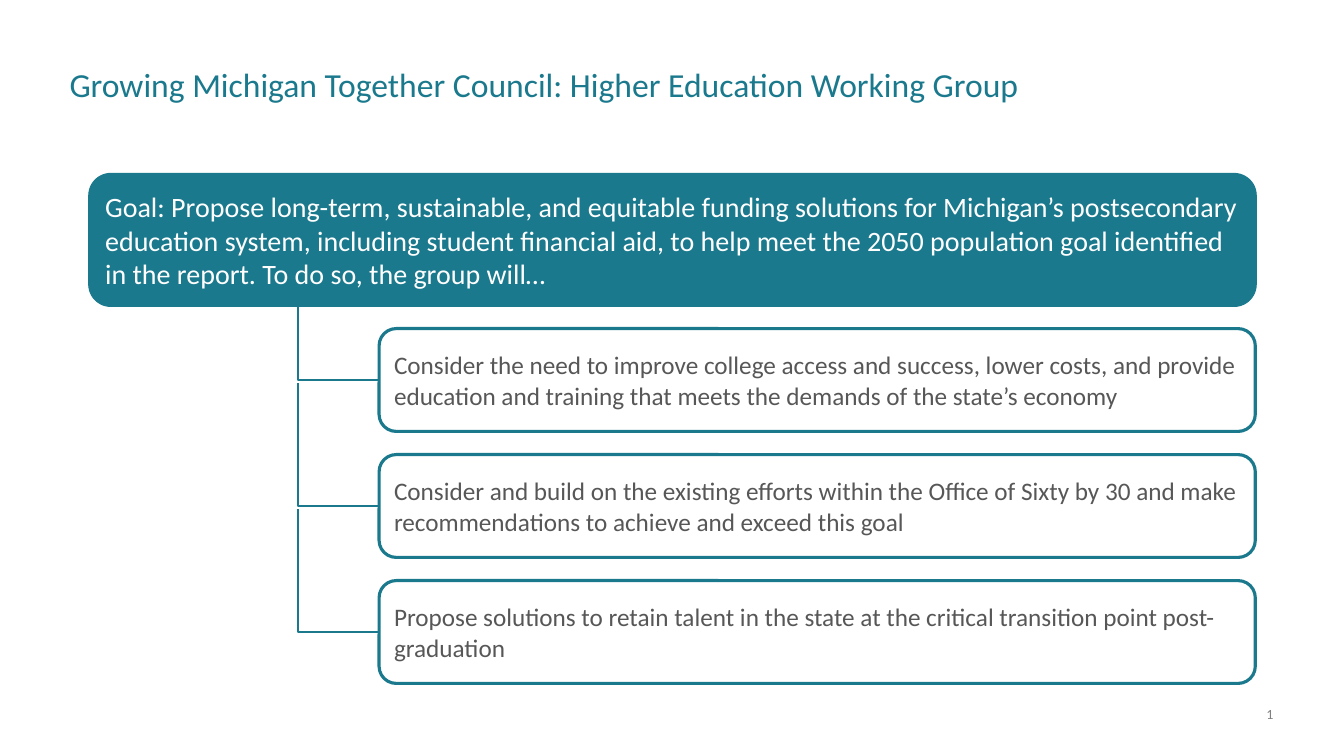
from dataclasses import dataclass

from lxml import etree
from pptx import Presentation
from pptx.dml.color import RGBColor
from pptx.enum.shapes import MSO_CONNECTOR, MSO_SHAPE
from pptx.enum.text import MSO_ANCHOR, PP_ALIGN
from pptx.oxml.ns import qn
from pptx.util import Inches, Pt

ROUND = MSO_SHAPE.ROUNDED_RECTANGLE
ELBOW = MSO_CONNECTOR.ELBOW
TOP, MIDDLE, BOTTOM = MSO_ANCHOR.TOP, MSO_ANCHOR.MIDDLE, MSO_ANCHOR.BOTTOM
LEFT, RIGHT = PP_ALIGN.LEFT, PP_ALIGN.RIGHT


@dataclass(frozen=True)
class Theme:
    font: str = "Calibri"
    teal: str = "1A798D"
    white: str = "FFFFFF"
    ink: str = "575757"
    gray: str = "808080"
    title: int = 24
    goal: int = 20
    task: int = 18
    number: int = 10


@dataclass(frozen=True)
class Box:
    left: float
    top: float
    width: float
    height: float
    text: str
    size: int
    color: str
    fill: str = ""
    line: float = 0


THEME = Theme()


def write(frame, box: Box, anchor=MIDDLE, align=LEFT) -> None:
    frame.word_wrap = True
    frame.vertical_anchor = anchor
    para = frame.paragraphs[0]
    para.text = box.text
    para.alignment = align
    font = para.font
    font.name = THEME.font
    font.size = Pt(box.size)
    font.color.rgb = RGBColor.from_string(box.color)


def place(box: Box) -> tuple:
    return tuple(Inches(n) for n in (box.left, box.top, box.width, box.height))


def add_label(slide, box: Box, anchor=TOP, align=LEFT):
    frame = slide.shapes.add_textbox(*place(box)).text_frame
    frame.margin_left = frame.margin_right = 0
    frame.margin_top = frame.margin_bottom = 0
    write(frame, box, anchor, align)
    return frame.paragraphs[0]


def add_card(slide, box: Box) -> None:
    card = slide.shapes.add_shape(ROUND, *place(box))
    card.shadow.inherit = False
    card.fill.solid()
    card.fill.fore_color.rgb = RGBColor.from_string(box.fill)
    card.line.color.rgb = RGBColor.from_string(THEME.teal)
    card.line.width = Pt(box.line)
    write(card.text_frame, box)


def add_branch(slide, x: float, top: float, end: float, low: float) -> None:
    """Draw an elbow that runs down first, then right."""
    link = slide.shapes.add_connector(
        ELBOW, Inches(x), Inches(top), Inches(end), Inches(low))
    link.line.color.rgb = RGBColor.from_string(THEME.teal)
    link.line.width = Pt(1.5)
    props = link._element.spPr
    guides = props.find(qn("a:prstGeom")).get_or_add_avLst()
    etree.SubElement(guides, qn("a:gd"), name="adj1", fmla="val 0")
    etree.SubElement(props, qn("a:effectLst"))


TITLE = Box(0.69, 0.68, 11.96, 0.36,
            "Growing Michigan Together Council: Higher Education Working Group",
            THEME.title, THEME.teal)
GOAL = Box(0.88, 1.72, 11.58, 1.32,
           "Goal: Propose long-term, sustainable, and equitable funding solutions "
           "for Michigan’s postsecondary education system, including student "
           "financial aid, to help meet the 2050 population goal identified in "
           "the report. To do so, the group will…",
           THEME.goal, THEME.white, THEME.teal, 0.75)
NUMBER = Box(12.21, 7, 0.42, 0.17, "1", THEME.number, THEME.gray)
TASKS = (
    "Consider the need to improve college access and success, lower costs, and "
    "provide education and training that meets the demands of the state’s economy",
    "Consider and build on the existing efforts within the Office of Sixty by 30 "
    "and make recommendations to achieve and exceed this goal",
    "Propose solutions to retain talent in the state at the critical transition "
    "point post-graduation",
)
TASK_X, TASK_Y, TASK_W, TASK_H = 3.76, 3.26, 8.69, 1.02
STEP = 1.25
TRUNK = 2.96


def main() -> None:
    deck = Presentation()
    deck.slide_width, deck.slide_height = Inches(13.33), Inches(7.5)
    slide = deck.slides.add_slide(deck.slide_layouts[6])

    # Page number and title
    add_label(slide, NUMBER, BOTTOM, RIGHT)
    add_label(slide, TITLE).line_spacing = 0.9

    # Goal and its tasks
    add_card(slide, GOAL)
    for i, text in enumerate(TASKS):
        add_card(slide, Box(TASK_X, TASK_Y + i * STEP, TASK_W, TASK_H, text,
                            THEME.task, THEME.ink, THEME.white, 2.25))

    # Branches, each starting just below the one before
    start = GOAL.top + GOAL.height
    for i in range(len(TASKS)):
        low = TASK_Y + i * STEP + TASK_H / 2
        add_branch(slide, TRUNK, start, TASK_X, low)
        start = low + 0.03

    deck.save("out.pptx")


if __name__ == "__main__":
    main()
